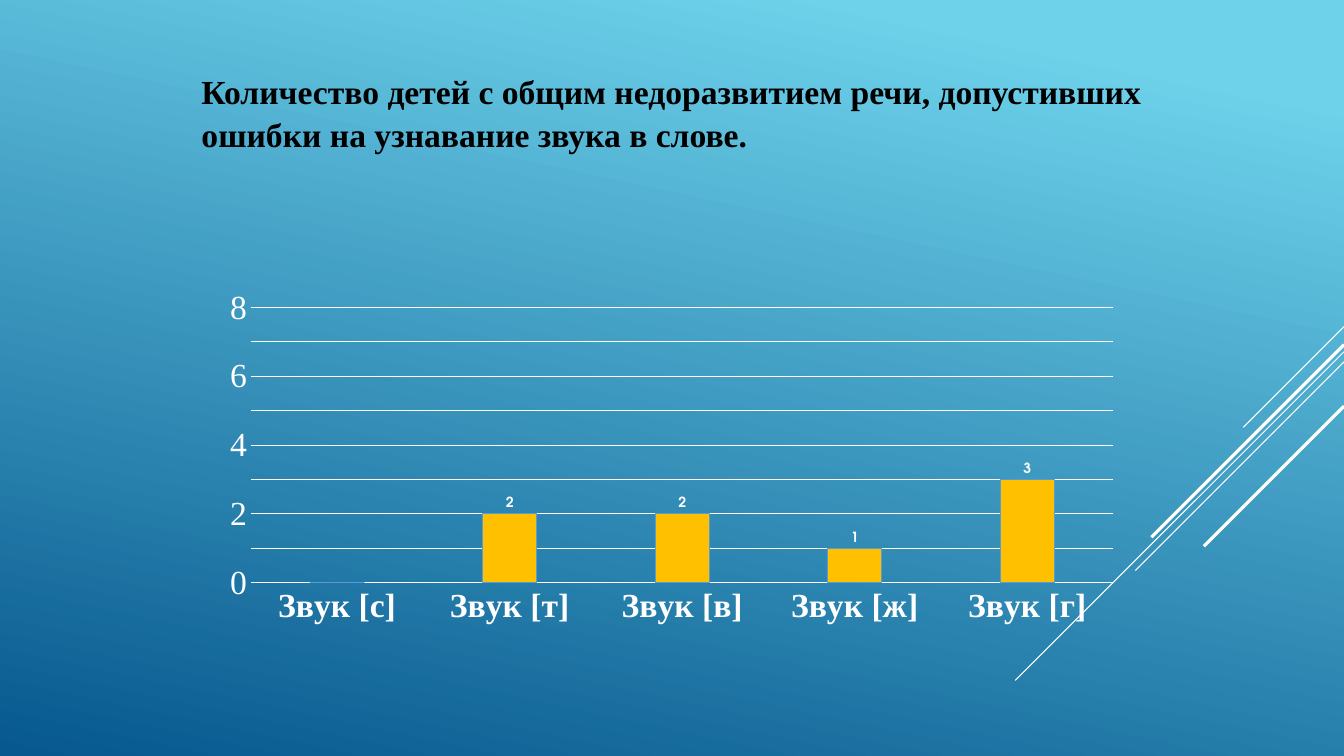
from lxml import etree
from pptx import Presentation
from pptx.chart.data import CategoryChartData
from pptx.dml.color import RGBColor
from pptx.enum import chart as ch, shapes, text as tx
from pptx.oxml import ns
from pptx.util import Inches, Pt

HUES = {"sky": "6ED2EB", "deep": "06588E", "white": "FFFFFF",
        "black": "000000", "gold": "FFC000", "edge": "5B9BD5"}
SERIF = "Times New Roman"
SANS = "TeX Gyre Adventor"
TITLE = ["Количество детей с общим недоразвитием речи, допустивших",
         "ошибки на узнавание звука в слове."]
ERRORS = {"с": 0, "т": 2, "в": 2, "ж": 1, "г": 3}
RAYS = [(3.24, 1, 0.75), (3.49, 3.26, 0.75), (3.59, 2.07, 0.75),
        (3.42, 1.91, 2.25), (4.03, 1.39, 2.25)]
PLOT = {"x": 0.094, "y": 0.045, "w": 0.896, "h": 0.644}


def hue(name):
    return RGBColor.from_string(HUES[name])


def style(font, size, color="white", face=SERIF, bold=False):
    font.size = Pt(size)
    font.name = face
    font.bold = bold
    font.color.rgb = hue(color)


def stroke(line, color="white", width=0.75):
    line.color.rgb = hue(color)
    line.width = Pt(width)


def paint(slide):
    fill = slide.background.fill
    fill.gradient()
    fill.gradient_angle = 258
    for stop, (spot, color) in zip(fill.gradient_stops, [(0.1, "sky"), (1, "deep")]):
        stop.position = spot
        stop.color.rgb = hue(color)


def add_ray(slide, top, run, width):
    right = 13.33
    ray = slide.shapes.add_connector(
        shapes.MSO_CONNECTOR.STRAIGHT, Inches(right), Inches(top),
        Inches(right - run), Inches(top + run))
    stroke(ray.line, width=width)
    etree.SubElement(ray._element.spPr, ns.qn("a:effectLst"))


def add_text(slide, lines, box, **form):
    frame = slide.shapes.add_textbox(*map(Inches, box)).text_frame
    frame.word_wrap = True
    frame.auto_size = tx.MSO_AUTO_SIZE.SHAPE_TO_FIT_TEXT
    for i, line in enumerate(lines):
        para = frame.add_paragraph() if i else frame.paragraphs[0]
        para.line_spacing = 1.07
        props = para._p.get_or_add_pPr()
        props.set("marL", str(Inches(0.2)))
        props.set("indent", str(Inches(0.3)))
        run = para.add_run()
        run.text = line
        style(run.font, **form)
    para.space_after = Pt(8)


def place_plot(chart):
    area = chart._chartSpace.chart.plotArea
    for old in area.findall(ns.qn("c:layout")):
        area.remove(old)
    layout = etree.Element(ns.qn("c:layout"))
    manual = etree.SubElement(layout, ns.qn("c:manualLayout"))
    rules = {"layoutTarget": "inner", "xMode": "edge", "yMode": "edge", **PLOT}
    for tag, val in rules.items():
        etree.SubElement(manual, ns.qn("c:" + tag)).set("val", str(val))
    area.insert(0, layout)


def set_axes(chart):
    cat, val = chart.category_axis, chart.value_axis
    for axis in (cat, val):
        axis.major_tick_mark = axis.minor_tick_mark = ch.XL_TICK_MARK.NONE
        style(axis.tick_labels.font, 24, bold=axis is cat)
    stroke(cat.format.line)
    val.format.line.fill.background()
    val.minimum_scale, val.maximum_scale, val.major_unit = 0, 8, 1
    val.has_major_gridlines = True
    stroke(val.major_gridlines.format.line)


def add_bars(slide, box):
    data = CategoryChartData()
    data.categories = [f"Звук [{sound}]" for sound in ERRORS]
    data.add_series("Series 1", ERRORS.values())
    chart = slide.shapes.add_chart(
        ch.XL_CHART_TYPE.COLUMN_CLUSTERED, *map(Inches, box), data).chart
    chart.has_title = chart.has_legend = False
    style(chart.font, 10, face=SANS)
    place_plot(chart)
    set_axes(chart)
    plot = chart.plots[0]
    plot.vary_by_categories = False
    plot.gap_width, plot.overlap = 219, -27
    bars = plot.series[0]
    bars.format.fill.solid()
    bars.format.fill.fore_color.rgb = hue("gold")
    stroke(bars.format.line, "edge")
    bars.data_labels.show_value = False
    for i, count in enumerate(ERRORS.values()):
        if count:
            label = bars.points[i].data_label
            style(label.font, 10, face=SANS, bold=True)
            label.position = ch.XL_LABEL_POSITION.OUTSIDE_END


def main():
    deck = Presentation()
    deck.slide_width, deck.slide_height = Inches(13.33), Inches(7.5)
    slide = deck.slides.add_slide(deck.slide_layouts[6])
    paint(slide)
    for ray in RAYS:
        add_ray(slide, *ray)
    add_bars(slide, (1.59, 2.86, 9.55, 4.24))
    add_text(slide, TITLE, (1.4, 0.63, 10.23, 0.97),
             size=24, color="black", bold=True)
    deck.save("out.pptx")


if __name__ == "__main__":
    main()
